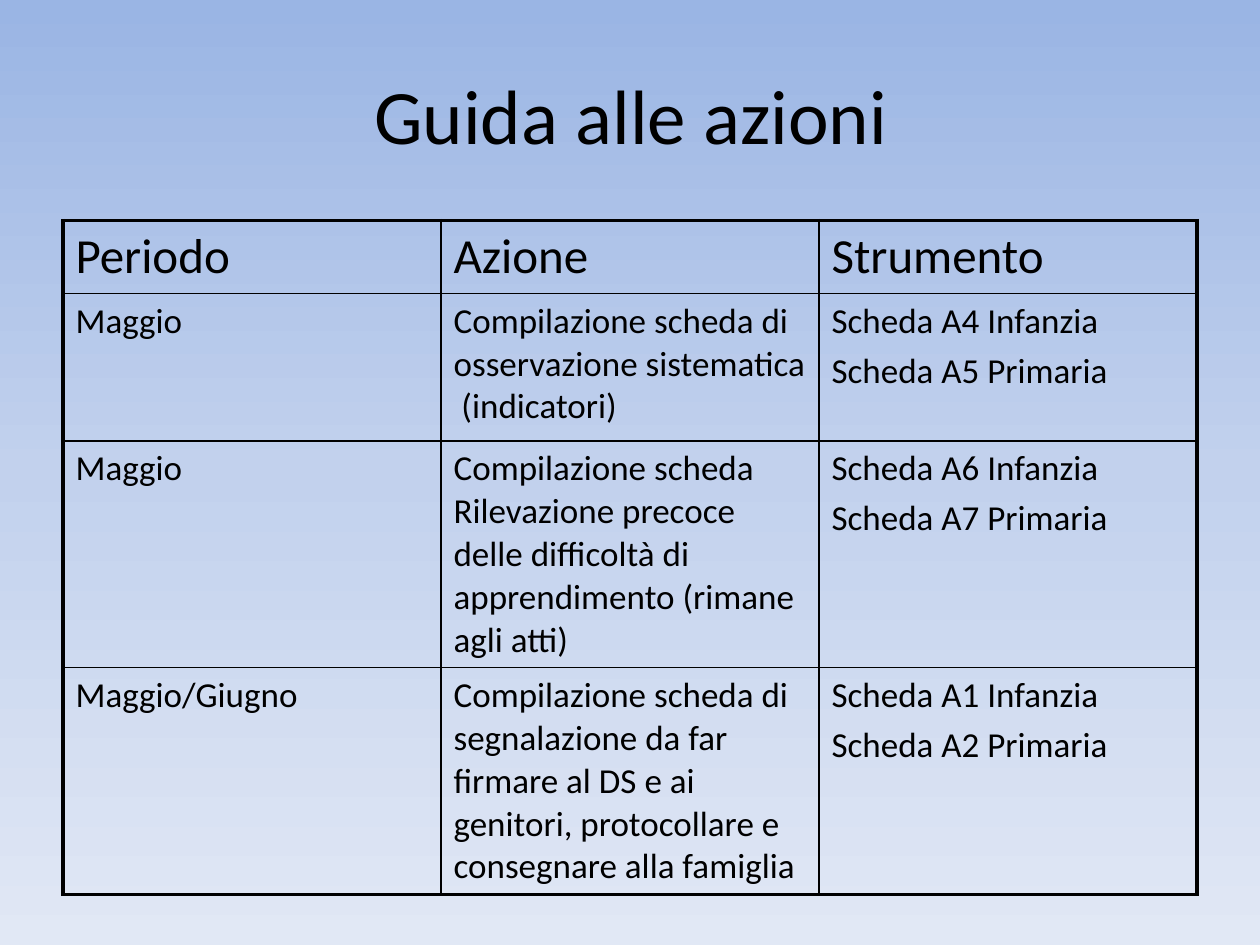
from copy import deepcopy

from lxml.etree import SubElement
from pptx import Presentation
from pptx.dml.color import RGBColor
from pptx.enum.text import MSO_ANCHOR, PP_ALIGN
from pptx.oxml.ns import qn
from pptx.util import Inches, Pt

# Content
TITLE = "Guida alle azioni"
ROWS = [
    (["Periodo"], ["Azione"], ["Strumento"]),
    (["Maggio"],
     ["Compilazione scheda di osservazione sistematica  (indicatori)"],
     ["Scheda A4 Infanzia", "Scheda A5 Primaria"]),
    (["Maggio"],
     ["Compilazione scheda Rilevazione precoce delle difficoltà di "
      "apprendimento (rimane agli atti)"],
     ["Scheda A6 Infanzia", "Scheda A7 Primaria"]),
    (["Maggio/Giugno"],
     ["Compilazione scheda di segnalazione da far firmare al DS e ai genitori, "
      "protocollare e consegnare alla famiglia"],
     ["Scheda A1 Infanzia", "Scheda A2 Primaria"]),
]

# Layout and style
ROW_HEIGHTS = [0.58, 1.17, 1.8, 1.8]
COLUMN_WIDTH = 3
FONT, BLACK = "Calibri", "000000"
TITLE_SIZE, HEADER_SIZE, BODY_SIZE = 44, 28, 20
OUTER_LINE, INNER_LINE = 2.25, 1
BACKGROUND = [(0, "9AB5E4"), (0.5, "C2D1ED"), (1, "E1E8F5")]


def color(value):
    return RGBColor.from_string(value)


def add_text(paragraph, text, size):
    run = paragraph.add_run()
    run.text = text
    run.font.name = FONT
    run.font.size = Pt(size)
    run.font.bold = False
    run.font.color.rgb = color(BLACK)


def paint_background(slide):
    fill = slide.background.fill
    fill.gradient()
    fill.gradient_angle = 270
    stop_list = slide.element.find(".//" + qn("a:gsLst"))
    stop_list.insert(1, deepcopy(stop_list[0]))
    for stop, (position, value) in zip(fill.gradient_stops, BACKGROUND):
        stop.position = position
        stop.color.rgb = color(value)


def set_space_before(paragraph, percent):
    properties = paragraph._p.get_or_add_pPr()
    spacing = SubElement(properties, qn("a:spcBef"))
    SubElement(spacing, qn("a:spcPct"), val=str(percent * 1000))


def set_borders(cell, widths):
    properties = cell._tc.get_or_add_tcPr()
    for index, (side, width) in enumerate(widths.items()):
        line = properties.makeelement(qn("a:ln" + side), {"w": str(Pt(width))})
        fill = SubElement(line, qn("a:solidFill"))
        SubElement(fill, qn("a:srgbClr"), val=BLACK)
        properties.insert(index, line)


def add_title(slide):
    box = slide.shapes.add_textbox(Inches(0.51), Inches(0.28), Inches(9), Inches(1.25))
    frame = box.text_frame
    frame.word_wrap = True
    frame.vertical_anchor = MSO_ANCHOR.MIDDLE
    frame.paragraphs[0].alignment = PP_ALIGN.CENTER
    add_text(frame.paragraphs[0], TITLE, TITLE_SIZE)


def fill_cell(cell, lines, size):
    cell.fill.background()
    frame = cell.text_frame
    for index, text in enumerate(lines):
        paragraph = frame.add_paragraph() if index else frame.paragraphs[0]
        set_space_before(paragraph, 20)
        add_text(paragraph, text, size)


def add_action_table(slide):
    row_count, column_count = len(ROWS), len(ROWS[0])
    table = slide.shapes.add_table(
        row_count, column_count, Inches(0.5), Inches(1.75),
        Inches(COLUMN_WIDTH * column_count), Inches(sum(ROW_HEIGHTS))).table
    table.first_row = False
    table.horz_banding = False
    for column in table.columns:
        column.width = Inches(COLUMN_WIDTH)
    for row, height in zip(table.rows, ROW_HEIGHTS):
        row.height = Inches(height)

    for r, row in enumerate(ROWS):
        for c, lines in enumerate(row):
            cell = table.cell(r, c)
            fill_cell(cell, lines, BODY_SIZE if r else HEADER_SIZE)
            # Thick lines only along the outer edge
            on_edge = {"L": c == 0, "R": c == column_count - 1,
                       "T": r == 0, "B": r == row_count - 1}
            set_borders(cell, {side: OUTER_LINE if edge else INNER_LINE
                               for side, edge in on_edge.items()})


def main():
    presentation = Presentation()
    presentation.slide_width = Inches(10)
    presentation.slide_height = Inches(7.5)
    slide = presentation.slides.add_slide(presentation.slide_layouts[6])
    paint_background(slide)
    add_title(slide)
    add_action_table(slide)
    presentation.save("out.pptx")


if __name__ == "__main__":
    main()
